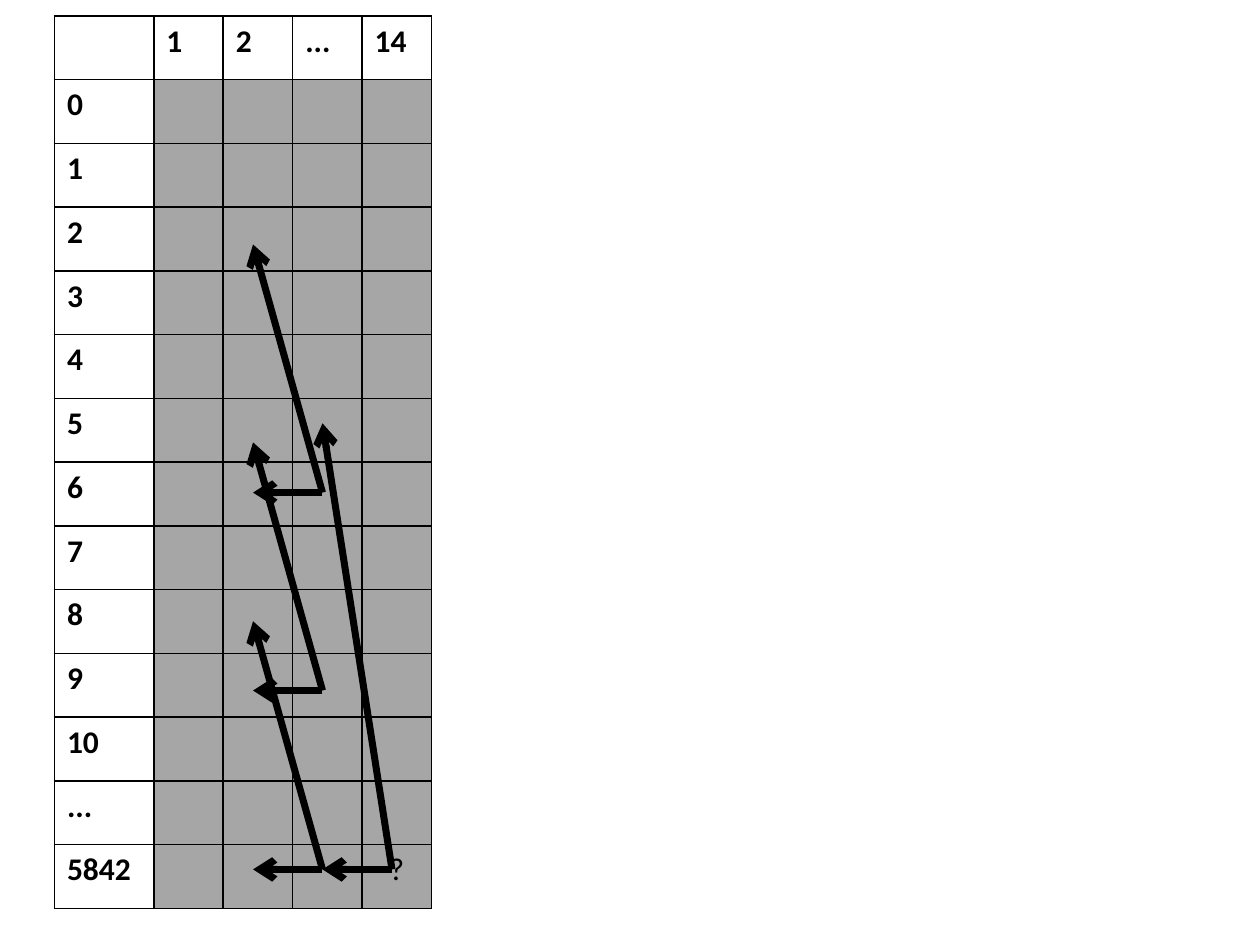
from lxml import etree
from pptx import Presentation
from pptx.dml.color import RGBColor
from pptx.enum.shapes import MSO_CONNECTOR
from pptx.enum.text import PP_ALIGN
from pptx.oxml.ns import qn
from pptx.util import Pt

STRAIGHT = MSO_CONNECTOR.STRAIGHT
CENTER = PP_ALIGN.CENTER
BLACK = RGBColor(0x00, 0x00, 0x00)
WHITE = RGBColor(0xFF, 0xFF, 0xFF)
GRAY = RGBColor(0xA6, 0xA6, 0xA6)

COLUMN_LABELS = ["", "1", "2", "...", "14"]
ROW_LABELS = [str(number) for number in range(11)] + ["...", "5842"]
FIRST_COLUMN_WIDTH = 56.8
COLUMN_WIDTH = 39.7
ROW_HEIGHT = 36.45


def add_borders(cell):
    properties = cell._tc.get_or_add_tcPr()
    for index, side in enumerate(("lnL", "lnR", "lnT", "lnB")):
        border = etree.Element(qn(f"a:{side}"), w=str(Pt(1)))
        fill = etree.SubElement(border, qn("a:solidFill"))
        etree.SubElement(fill, qn("a:srgbClr"), val=str(BLACK))
        properties.insert(index, border)


def add_arrow(start_x, start_y, end_x, end_y):
    arrow = slide.shapes.add_connector(
        STRAIGHT, Pt(start_x), Pt(start_y), Pt(end_x), Pt(end_y))
    arrow.line.color.rgb = BLACK
    arrow.line.width = Pt(4)
    etree.SubElement(arrow.line._get_or_add_ln(), qn("a:tailEnd"), type="arrow")
    etree.SubElement(arrow._element.spPr, qn("a:effectLst"))


presentation = Presentation()
presentation.slide_width = Pt(720)
presentation.slide_height = Pt(540)
slide = presentation.slides.add_slide(presentation.slide_layouts[6])

# Table of subproblems
row_count = len(ROW_LABELS) + 1
column_count = len(COLUMN_LABELS)
table = slide.shapes.add_table(
    row_count, column_count, Pt(31.1), Pt(9.1),
    Pt(FIRST_COLUMN_WIDTH + (column_count - 1) * COLUMN_WIDTH),
    Pt(row_count * ROW_HEIGHT)).table
table.first_row = False
table.horz_banding = False
for index, column in enumerate(table.columns):
    column.width = Pt(COLUMN_WIDTH if index else FIRST_COLUMN_WIDTH)
for row in table.rows:
    row.height = Pt(ROW_HEIGHT)

# Header labels, gray body and the unknown value in the last cell
for row_index, row_label in enumerate([""] + ROW_LABELS):
    for column_index, column_label in enumerate(COLUMN_LABELS):
        cell = table.cell(row_index, column_index)
        is_header = row_index == 0 or column_index == 0
        is_unknown = (row_index, column_index) == (row_count - 1, column_count - 1)
        cell.fill.solid()
        cell.fill.fore_color.rgb = WHITE if is_header else GRAY
        add_borders(cell)
        text = row_label or column_label if is_header else "?" if is_unknown else ""
        if text:
            paragraph = cell.text_frame.paragraphs[0]
            if is_unknown:
                paragraph.alignment = CENTER
            run = paragraph.add_run()
            run.text = text
            run.font.name = "Calibri"
            run.font.size = Pt(18)
            run.font.bold = is_header
            run.font.color.rgb = BLACK

# Dependencies: one arrow to the left, one up to an earlier row
LAST_X, MIDDLE_X, SECOND_X = 224, 184.3, 144.6
BOTTOM_Y = 496.8
RISE = 141.8
for start_x, end_x, start_y, rise in [
    (LAST_X, MIDDLE_X, BOTTOM_Y, 254.9),
    (MIDDLE_X, SECOND_X, BOTTOM_Y, RISE),
    (MIDDLE_X, SECOND_X, 394.6, RISE),
    (MIDDLE_X, SECOND_X, 281.5, RISE),
]:
    add_arrow(start_x, start_y, end_x, start_y)
    add_arrow(start_x, start_y, end_x, start_y - rise)

presentation.save("out.pptx")
